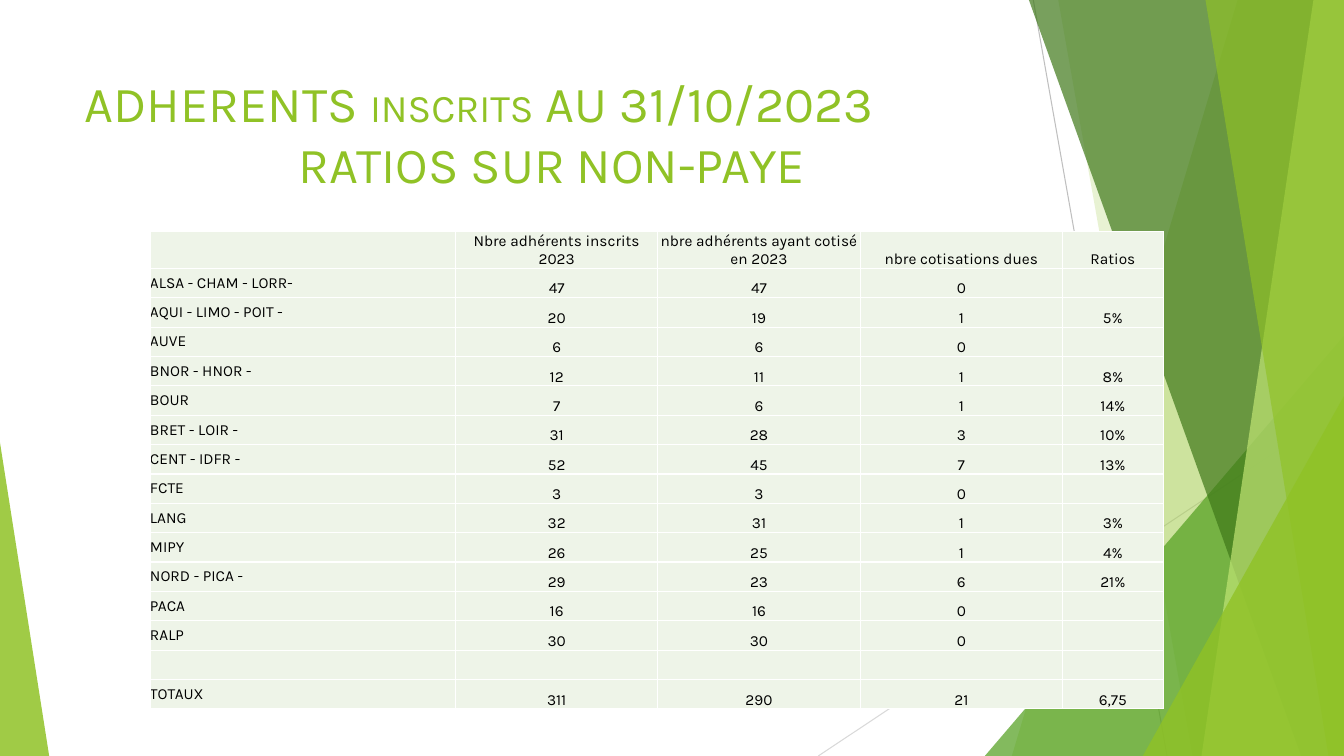
import pptx
import pptx.util
import pptx.dml.color
import pptx.enum.shapes
import pptx.enum.text
import pptx.oxml
import pptx.oxml.ns
import lxml.etree

Cm, Pt = pptx.util.Cm, pptx.util.Pt
ALIGN = pptx.enum.text.PP_ALIGN
ANCHOR = pptx.enum.text.MSO_ANCHOR
qn = pptx.oxml.ns.qn

# Content
FONT = "Karla"
WIDTH, HEIGHT = 33.87, 19.05
COLOURS = {
    "lime": "90C226", "green": "54A021", "forest": "3F7819", "pale": "C0E474",
    "cell": "EEF4E8", "text": "000000", "border": "FFFFFF",
    "grey": "BFBFBF", "light_grey": "D9D9D9",
}
# Left indent in cm, then (text, size) runs
TITLE = [
    (0, [("ADHERENTS ", 36), ("INSCRITS", 28), (" AU 31/10/2023", 36)]),
    (5.4, [("RATIOS SUR NON-PAYE", 36)]),
]
HEADERS = ["", "Nbre adhérents inscrits 2023", "nbre adhérents ayant cotisé en 2023",
           "nbre cotisations dues", "Ratios"]
REGIONS = [
    ("ALSA - CHAM - LORR-", "47", "47", "0", ""),
    ("AQUI - LIMO - POIT -", "20", "19", "1", "5%"),
    ("AUVE", "6", "6", "0", ""),
    ("BNOR - HNOR -", "12", "11", "1", "8%"),
    ("BOUR", "7", "6", "1", "14%"),
    ("BRET - LOIR -", "31", "28", "3", "10%"),
    ("CENT - IDFR -", "52", "45", "7", "13%"),
    ("FCTE", "3", "3", "0", ""),
    ("LANG", "32", "31", "1", "3%"),
    ("MIPY", "26", "25", "1", "4%"),
    ("NORD - PICA -", "29", "23", "6", "21%"),
    ("PACA", "16", "16", "0", ""),
    ("RALP", "30", "30", "0", ""),
    ("", "", "", "", ""),
    ("TOTAUX", "311", "290", "21", "6,75"),
]
COLUMN_WIDTHS = [7.7, 5.1, 5.1, 5.1, 2.54]
HEADER_HEIGHT, ROW_HEIGHT = 0.9, 0.74

# Decoration: lines (x1, y1, x2, y2, colour)
RAYS = [(26.04, 0, 29.41, HEIGHT, "grey"), (WIDTH, 10.24, 20.62, HEIGHT, "light_grey")]
# Facets, back to front: a band (top x, bottom x) reaching the right edge,
# or a triangle (left, top, width, apex); then colour and opacity
FACETS = [
    ("band", (31.19, 25.5), "lime", 30),
    ("band", (26.67, 30.05), "lime", 20),
    ("triangle", (24.82, 8.46, 9.05, 1), "green", 72),
    ("band", (25.93, 32.79), "forest", 70),
    ("band", (33.1, 30.28), "pale", 70),
    ("band", (30.38, 33.48), "lime", 65),
    ("triangle", (28.8, 9.98, 5.07, 1), "lime", 80),
    ("triangle", (0, 11.15, 1.24, 0), "lime", 85),
]


def rgb(name):
    return pptx.dml.color.RGBColor.from_string(COLOURS[name])


def add_span(para, text, size, colour):
    span = para.add_run()
    span.text = text
    span.font.name = FONT
    span.font.size = Pt(size)
    span.font.color.rgb = rgb(colour)


def add_ray(page, x1, y1, x2, y2, colour):
    ray = page.shapes.add_connector(pptx.enum.shapes.MSO_CONNECTOR.STRAIGHT,
                                    Cm(x1), Cm(y1), Cm(x2), Cm(y2))
    ray.line.color.rgb = rgb(colour)
    ray.line.width = Pt(0.75)
    lxml.etree.SubElement(ray._element.spPr, qn("a:effectLst"))


def add_facet(page, kind, geometry, colour, opacity):
    if kind == "band":
        top_x, bottom_x = geometry
        outline = page.shapes.build_freeform(Cm(top_x), 0)
        outline.add_line_segments([(Cm(WIDTH), 0), (Cm(WIDTH), Cm(HEIGHT)),
                                   (Cm(bottom_x), Cm(HEIGHT))], close=True)
        facet = outline.convert_to_shape()
    else:
        left, top, width, apex = geometry
        facet = page.shapes.add_shape(pptx.enum.shapes.MSO_SHAPE.ISOSCELES_TRIANGLE,
                                      Cm(left), Cm(top), Cm(width), Cm(HEIGHT - top))
        facet.adjustments[0] = apex
    facet.shadow.inherit = False
    facet.line.fill.background()
    facet.fill.solid()
    facet.fill.fore_color.rgb = rgb(colour)
    tint = facet._element.spPr.find(qn("a:solidFill"))[0]
    lxml.etree.SubElement(tint, qn("a:alpha"), val=str(opacity * 1000))


def add_title(page):
    box = page.shapes.add_textbox(Cm(1.88), Cm(1.7), Cm(23.88), Cm(3.66))
    frame = box.text_frame
    frame.word_wrap = True
    frame.vertical_anchor = ANCHOR.TOP
    for number, (indent, spans) in enumerate(TITLE):
        para = frame.add_paragraph() if number else frame.paragraphs[0]
        para.alignment = ALIGN.LEFT
        para._p.get_or_add_pPr().set("marL", str(Cm(indent)))
        for text, size in spans:
            add_span(para, text, size, "lime")


def fill_cell(cell, text, is_label):
    cell.margin_left = cell.margin_right = cell.margin_top = cell.margin_bottom = 0
    cell.vertical_anchor = ANCHOR.MIDDLE if is_label else ANCHOR.BOTTOM
    para = cell.text_frame.paragraphs[0]
    para.alignment = ALIGN.LEFT if is_label else ALIGN.CENTER
    if text:
        add_span(para, text, 11, "text")
    else:
        lxml.etree.SubElement(para._p, qn("a:endParaRPr"), sz="1100")
    # White borders come before the fill in the cell properties
    properties = cell._tc.get_or_add_tcPr()
    for side in ("lnL", "lnR", "lnT", "lnB"):
        border = lxml.etree.SubElement(properties, qn("a:" + side), w=str(Pt(1)))
        paint = lxml.etree.SubElement(border, qn("a:solidFill"))
        lxml.etree.SubElement(paint, qn("a:srgbClr"), val=COLOURS["border"])
    cell.fill.solid()
    cell.fill.fore_color.rgb = rgb("cell")


def add_ratio_table(page):
    rows = [HEADERS] + REGIONS
    heights = [HEADER_HEIGHT] + [ROW_HEIGHT] * len(REGIONS)
    table = page.shapes.add_table(len(rows), len(HEADERS), Cm(3.78), Cm(5.83),
                                  Cm(sum(COLUMN_WIDTHS)), Cm(sum(heights))).table
    table.first_row = table.horz_banding = False
    for column, width in zip(table.columns, COLUMN_WIDTHS):
        column.width = Cm(width)
    for row, height, texts in zip(table.rows, heights, rows):
        row.height = Cm(height)
        for number, (cell, text) in enumerate(zip(row.cells, texts)):
            fill_cell(cell, text, number == 0)


def main():
    deck = pptx.Presentation()
    deck.slide_width, deck.slide_height = Cm(WIDTH), Cm(HEIGHT)
    page = deck.slides.add_slide(deck.slide_layouts[6])
    for ray in RAYS:
        add_ray(page, *ray)
    for facet in FACETS:
        add_facet(page, *facet)
    add_title(page)
    add_ratio_table(page)
    deck.save("out.pptx")


if __name__ == "__main__":
    main()
